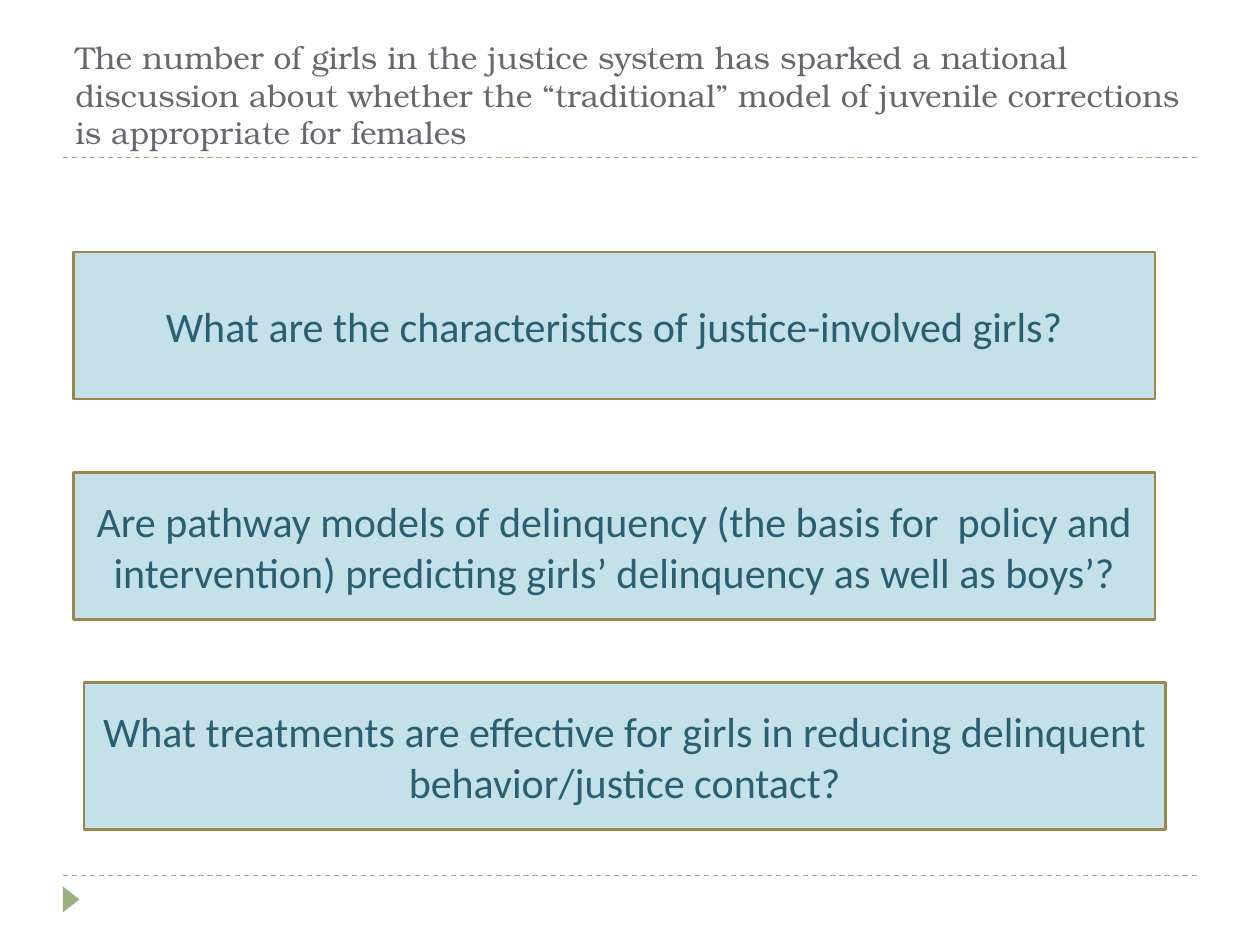
from dataclasses import dataclass

from lxml.etree import SubElement
from pptx import Presentation
from pptx.dml.color import RGBColor
from pptx.enum.dml import MSO_LINE
from pptx.enum.shapes import MSO_CONNECTOR, MSO_SHAPE
from pptx.enum.text import MSO_ANCHOR, PP_ALIGN
from pptx.oxml.ns import qn
from pptx.slide import Slide
from pptx.text.text import TextFrame
from pptx.util import Pt

SAGE = RGBColor(0x9C, 0xB0, 0x84)
TITLE_GRAY = RGBColor(0x69, 0x67, 0x6D)
PALE_BLUE = RGBColor(0xC4, 0xE0, 0xE9)
OLIVE = RGBColor(0x98, 0x89, 0x4B)
DEEP_TEAL = RGBColor(0x29, 0x5F, 0x71)

PAGE_WIDTH, PAGE_HEIGHT = 720, 540
MARGIN = 36
TITLE_RULE_TOP, FOOTER_RULE_TOP = 90, 500.4
QUESTION_WIDTH, QUESTION_HEIGHT = 618, 84

TITLE = (
    "The number of girls in the justice system has sparked a national discussion "
    "about whether the “traditional” model of juvenile corrections is appropriate for females"
)


@dataclass(frozen=True)
class Question:
    left: float
    top: float
    text: str


QUESTIONS = [
    Question(42, 144, "What are the characteristics of justice-involved girls?"),
    Question(
        42,
        270,
        "Are pathway models of delinquency (the basis for  policy and intervention) "
        "predicting girls’ delinquency as well as boys’?",
    ),
    Question(
        48,
        390,
        "What treatments are effective for girls in reducing delinquent "
        "behavior/justice contact?",
    ),
]


def write_text(
    frame: TextFrame,
    text: str,
    font_name: str,
    size: float,
    color: RGBColor,
    anchor: MSO_ANCHOR,
    alignment: PP_ALIGN,
) -> None:
    frame.text = text
    frame.word_wrap = True
    frame.vertical_anchor = anchor
    para = frame.paragraphs[0]
    para.alignment = alignment
    for span in para.runs:
        span.font.name = font_name
        span.font.size = Pt(size)
        span.font.color.rgb = color


def draw_rule(page: Slide, top: float) -> None:
    rule = page.shapes.add_connector(
        MSO_CONNECTOR.STRAIGHT, Pt(MARGIN), Pt(top), Pt(PAGE_WIDTH - MARGIN), Pt(top)
    )
    rule.line.color.rgb = SAGE
    rule.line.width = Pt(0.75)
    rule.line.dash_style = MSO_LINE.DASH
    SubElement(rule._element.spPr, qn("a:effectLst"))


def draw_marker(page: Slide) -> None:
    marker = page.shapes.add_shape(
        MSO_SHAPE.ISOSCELES_TRIANGLE, Pt(33.1), Pt(509.2), Pt(15), Pt(9.5)
    )
    marker.rotation = 90
    marker.shadow.inherit = False
    marker.fill.solid()
    marker.fill.fore_color.rgb = SAGE
    marker.line.fill.background()


def draw_title(page: Slide) -> None:
    box = page.shapes.add_textbox(
        Pt(MARGIN), Pt(12), Pt(PAGE_WIDTH - 2 * MARGIN), Pt(TITLE_RULE_TOP - 12)
    )
    write_text(
        box.text_frame, TITLE, "TeX Gyre Bonum", 18, TITLE_GRAY,
        MSO_ANCHOR.BOTTOM, PP_ALIGN.LEFT,
    )


def draw_question(page: Slide, question: Question) -> None:
    box = page.shapes.add_shape(
        MSO_SHAPE.RECTANGLE,
        Pt(question.left), Pt(question.top), Pt(QUESTION_WIDTH), Pt(QUESTION_HEIGHT),
    )
    box.shadow.inherit = False
    box.fill.solid()
    box.fill.fore_color.rgb = PALE_BLUE
    box.line.color.rgb = OLIVE
    box.line.width = Pt(1.5)
    write_text(
        box.text_frame, question.text, "Calibri", 24, DEEP_TEAL,
        MSO_ANCHOR.MIDDLE, PP_ALIGN.CENTER,
    )


def main() -> None:
    deck = Presentation()
    deck.slide_width, deck.slide_height = Pt(PAGE_WIDTH), Pt(PAGE_HEIGHT)
    page = deck.slides.add_slide(deck.slide_layouts[6])
    for top in (FOOTER_RULE_TOP, TITLE_RULE_TOP):
        draw_rule(page, top)
    draw_marker(page)
    draw_title(page)
    for question in QUESTIONS:
        draw_question(page, question)
    deck.save("out.pptx")


if __name__ == "__main__":
    main()
